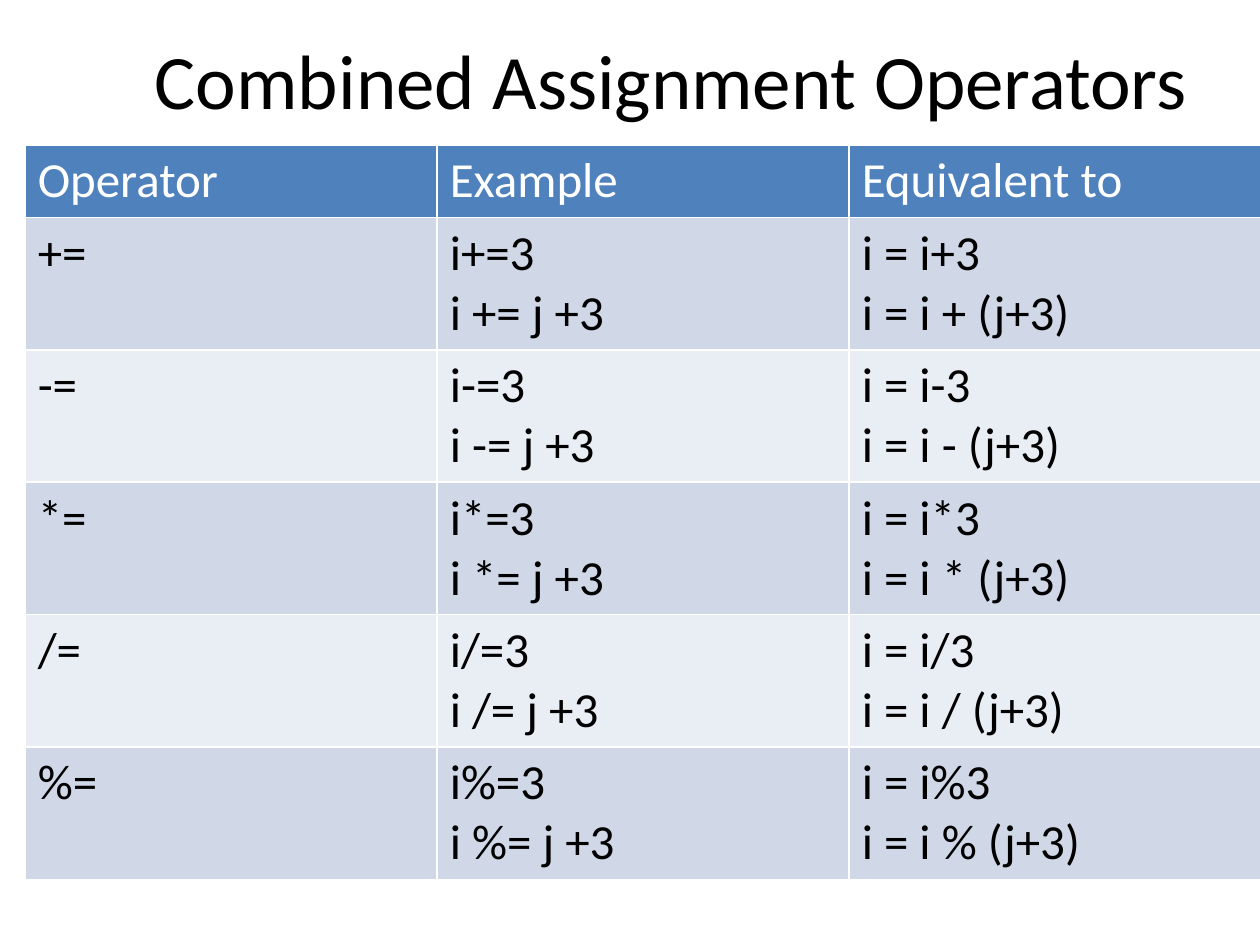
import pptx
import pptx.dml.color
import pptx.enum.text
import pptx.util

Inches = pptx.util.Inches
RGBColor = pptx.dml.color.RGBColor

BLACK = RGBColor(0x00, 0x00, 0x00)
WHITE = RGBColor(0xFF, 0xFF, 0xFF)
HEADER_BLUE = RGBColor(0x4F, 0x81, 0xBD)
BANDS = (RGBColor(0xD0, 0xD8, 0xE8), RGBColor(0xE9, 0xED, 0xF4))

HEADINGS = ("Operator", "Example", "Equivalent to")
OPERATORS = "+-*/%"


class SlideBuilder:
    """Holds the text style and the current slide, and adds elements to it."""

    def __init__(self, slide, font_name="Calibri"):
        self.slide = slide
        self.font_name = font_name

    def style(self, paragraph, size, color):
        font = paragraph.font
        font.name = self.font_name
        font.size = pptx.util.Pt(size)
        font.bold = False
        font.color.rgb = color

    def title(self, text, left, top, width, height):
        heading = self.slide.shapes.title
        heading.left, heading.top = Inches(left), Inches(top)
        heading.width, heading.height = Inches(width), Inches(height)
        frame = heading.text_frame
        frame.text = text
        frame.vertical_anchor = pptx.enum.text.MSO_ANCHOR.MIDDLE
        frame.paragraphs[0].alignment = pptx.enum.text.PP_ALIGN.CENTER
        self.style(frame.paragraphs[0], 44, BLACK)

    def cell(self, cell, text, fill, color):
        cell.fill.solid()
        cell.fill.fore_color.rgb = fill
        cell.text = text
        for paragraph in cell.text_frame.paragraphs:
            self.style(paragraph, 28, color)

    def table(self, rows, left, top, column_width, header_height, row_height):
        columns = len(rows[0])
        height = header_height + row_height * (len(rows) - 1)
        table = self.slide.shapes.add_table(
            len(rows), columns, Inches(left), Inches(top),
            Inches(column_width * columns), Inches(height)).table
        for column in table.columns:
            column.width = Inches(column_width)
        for index, texts in enumerate(rows):
            is_header = index == 0
            table.rows[index].height = Inches(header_height if is_header else row_height)
            fill = HEADER_BLUE if is_header else BANDS[(index - 1) % 2]
            color = WHITE if is_header else BLACK
            for cell, text in zip(table.rows[index].cells, texts):
                self.cell(cell, text, fill, color)


def operator_row(operator):
    return (f"{operator}=",
            f"i{operator}=3\ni {operator}= j +3",
            f"i = i{operator}3\ni = i {operator} (j+3)")


def main():
    presentation = pptx.Presentation()
    presentation.slide_width = Inches(10)
    presentation.slide_height = Inches(7.5)
    title_only = presentation.slide_layouts[5]
    builder = SlideBuilder(presentation.slides.add_slide(title_only))
    builder.title("Combined Assignment Operators", 0.83, 0, 9, 1.25)
    rows = [HEADINGS] + [operator_row(operator) for operator in OPERATORS]
    builder.table(rows, left=0.2, top=1.15, column_width=3.27,
                  header_height=0.57, row_height=1.05)
    presentation.save("out.pptx")


if __name__ == "__main__":
    main()
